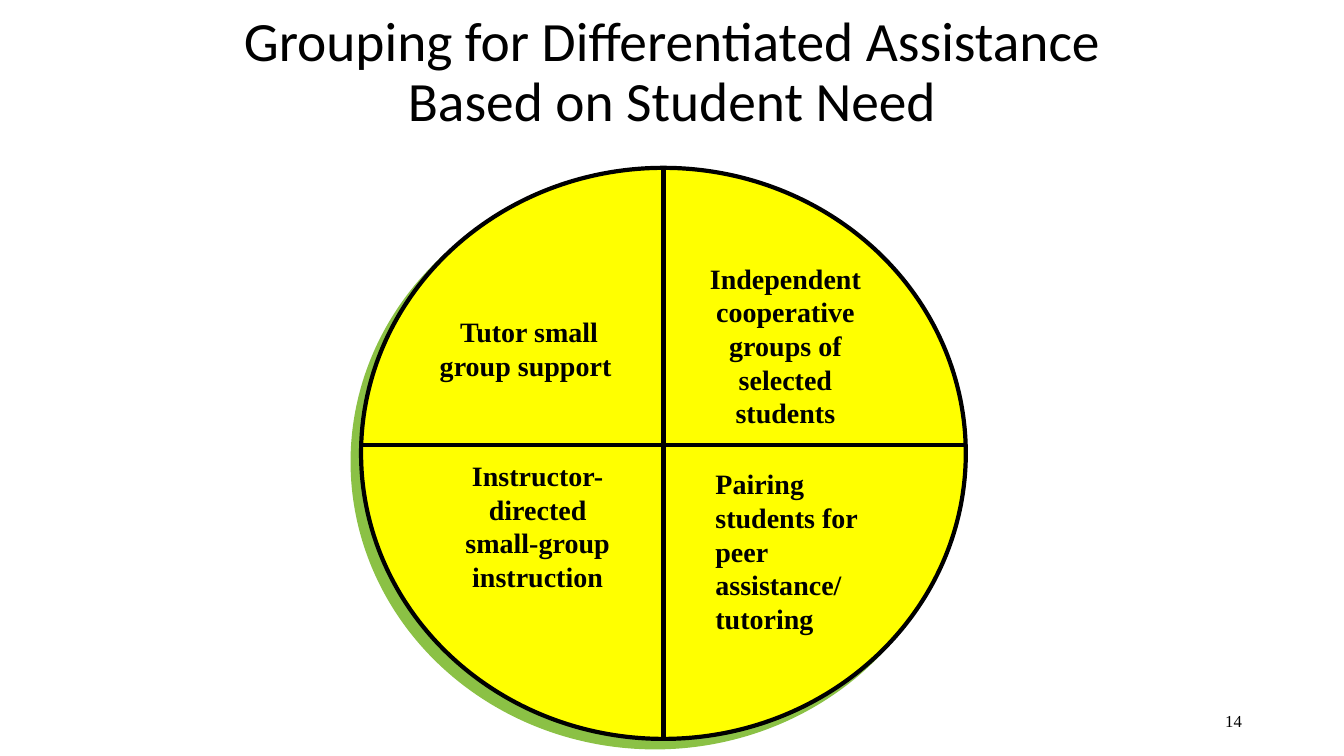
from dataclasses import dataclass

from lxml import etree
from pptx import Presentation
from pptx.dml.color import RGBColor
from pptx.enum.shapes import MSO_CONNECTOR, MSO_SHAPE
from pptx.enum.text import MSO_ANCHOR, PP_ALIGN
from pptx.oxml.ns import qn
from pptx.util import Cm, Pt

LEFT, CENTER, RIGHT = PP_ALIGN.LEFT, PP_ALIGN.CENTER, PP_ALIGN.RIGHT
TOP, MIDDLE = MSO_ANCHOR.TOP, MSO_ANCHOR.MIDDLE
OVAL, STRAIGHT = MSO_SHAPE.OVAL, MSO_CONNECTOR.STRAIGHT


@dataclass(frozen=True)
class Theme:
    """Colours, fonts and sizes of the slide."""
    ink: str = "000000"
    circle: str = "FFFF00"
    shadow: str = "8BC145"
    title_font: str = "Calibri"
    body_font: str = "Times New Roman"
    title_size: float = 39.6
    body_size: float = 20
    number_size: float = 12
    line_width: float = 3
    shadow_distance: float = 8.5
    shadow_angle: int = 135


class SlideBuilder:
    """Draws styled elements on one slide."""

    def __init__(self, slide, theme):
        self.slide = slide
        self.theme = theme

    def style_line(self, line):
        """Give a line the theme's colour and width."""
        line.color.rgb = RGBColor.from_string(self.theme.ink)
        line.width = Pt(self.theme.line_width)

    def text(self, content, box, font, size, bold=False, align=CENTER, anchor=TOP, spacing=None):
        """Add a wrapped text box."""
        frame = self.slide.shapes.add_textbox(*map(Cm, box)).text_frame
        frame.word_wrap = True
        frame.vertical_anchor = anchor
        paragraph = frame.paragraphs[0]
        paragraph.alignment = align
        paragraph.line_spacing = spacing
        run = paragraph.add_run()
        run.text = content
        run.font.name = font
        run.font.size = Pt(size)
        run.font.bold = bold
        run.font.color.rgb = RGBColor.from_string(self.theme.ink)

    def ellipse(self, box):
        """Add the filled ellipse with its solid offset shadow."""
        shape = self.slide.shapes.add_shape(OVAL, *map(Cm, box))
        shape.fill.solid()
        shape.fill.fore_color.rgb = RGBColor.from_string(self.theme.circle)
        self.style_line(shape.line)
        shape.shadow.inherit = False
        effects = shape.element.spPr.find(qn("a:effectLst"))
        shadow = etree.SubElement(
            effects, qn("a:outerShdw"), blurRad="0", dist=str(Pt(self.theme.shadow_distance)),
            dir=str(self.theme.shadow_angle * 60000), algn="ctr", rotWithShape="0")
        etree.SubElement(shadow, qn("a:srgbClr"), val=self.theme.shadow)

    def divider(self, start, end):
        """Add a straight line between two points."""
        connector = self.slide.shapes.add_connector(STRAIGHT, *map(Cm, start + end))
        self.style_line(connector.line)
        etree.SubElement(connector.element.spPr, qn("a:effectLst"))


def main():
    """Build and save the slide."""
    presentation = Presentation()
    presentation.slide_width, presentation.slide_height = Cm(33.87), Cm(19.05)
    theme = Theme()
    builder = SlideBuilder(presentation.slides.add_slide(presentation.slide_layouts[6]), theme)

    builder.text("14", (23.93, 17.65, 7.62, 1.02), theme.body_font, theme.number_size,
                 align=RIGHT, anchor=MIDDLE)
    builder.text("Grouping for Differentiated Assistance Based on Student Need",
                 (5.08, 0.2, 23.71, 3.3), theme.title_font, theme.title_size,
                 anchor=MIDDLE, spacing=0.9)

    left, top, width, height = circle = (9.1, 4.23, 15.24, 14.39)
    middle_x, divider_y = left + width / 2, 11.22
    builder.ellipse(circle)
    builder.divider((left, divider_y), (left + width, divider_y))
    builder.divider((middle_x, top), (middle_x, top + height))

    quadrants = [
        ("Tutor small group support ", (10.37, 7.8, 5.93, 1.96), CENTER),
        ("Independent cooperative groups of selected students", (17.36, 6.46, 4.87, 4.52), CENTER),
        ("Instructor- directed small-group instruction", (11.22, 11.43, 4.66, 3.68), CENTER),
        ("Pairing students for peer assistance/ tutoring", (17.78, 11.64, 4.45, 4.52), LEFT),
    ]
    for content, box, align in quadrants:
        builder.text(content, box, theme.body_font, theme.body_size, bold=True, align=align)

    presentation.save("out.pptx")


if __name__ == "__main__":
    main()
